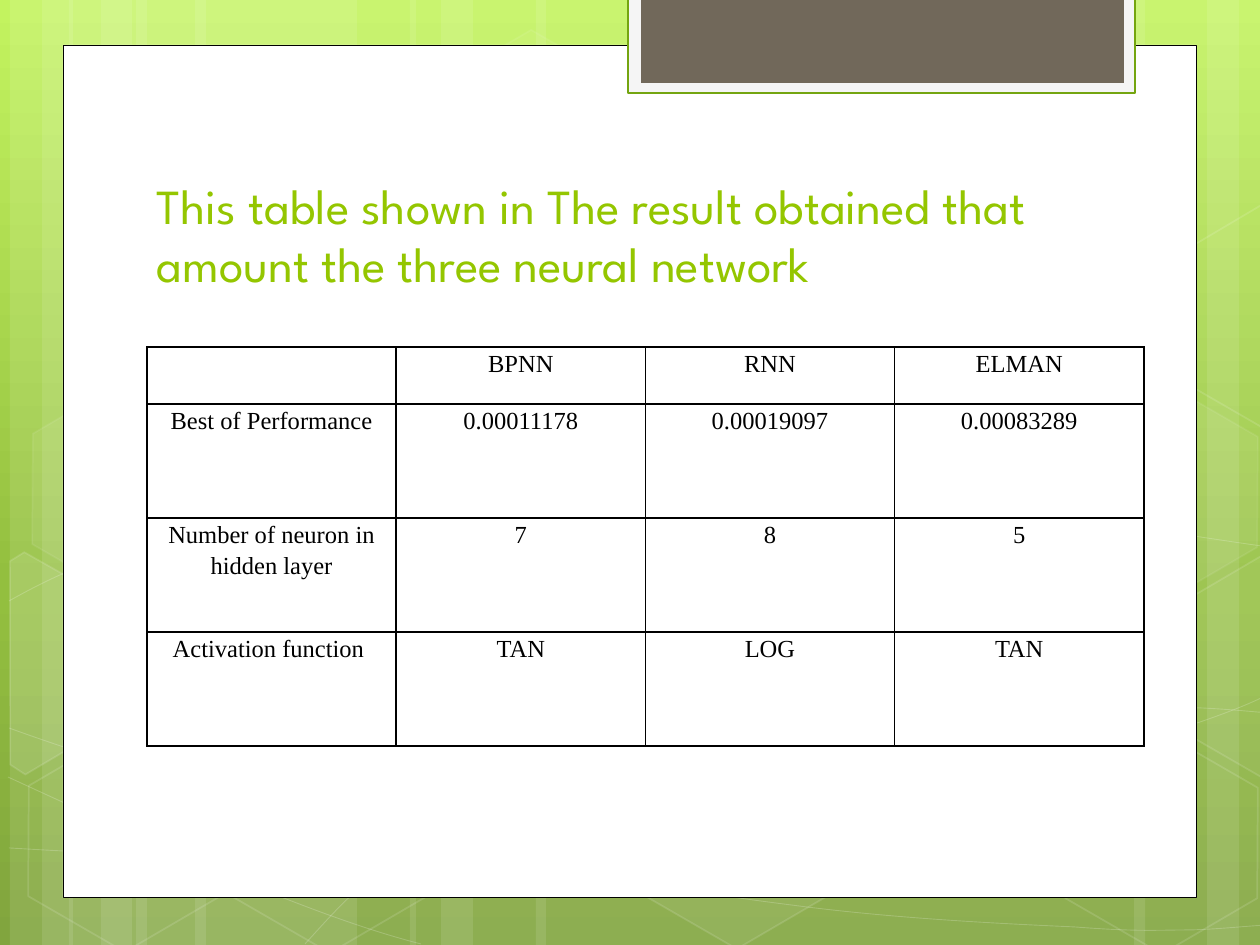
"""Build a slide comparing the results of three neural networks in a table."""
import copy
import math

import pptx
import pptx.dml.color
import pptx.enum.shapes
import pptx.enum.text
import pptx.oxml
import pptx.oxml.ns
import pptx.util

SCALE = 914400 / 126
COLORS = {
    "sky": "C3F35F", "leaf": "93BF3F", "moss": "81A53E", "white": "FFFFFF", "black": "000000",
    "frame": "F5F5F5", "frame_edge": "74A510", "tab": "71685A", "title": "94C600",
}
RECTANGLE = pptx.enum.shapes.MSO_SHAPE.RECTANGLE
HEXAGON = pptx.enum.shapes.MSO_SHAPE.HEXAGON
qn = pptx.oxml.ns.qn


def px(*lengths):
    return [pptx.util.Emu(round(length * SCALE)) for length in lengths]


def paint(shape, fill=None, line=None, width=1, fill_alpha=100, line_alpha=100):
    shape.shadow.inherit = False
    for target, color, alpha in ((shape.fill, fill, fill_alpha), (shape.line.fill, line, line_alpha)):
        if color is None or alpha == 0:
            target.background()
            continue
        target.solid()
        target.fore_color.rgb = pptx.dml.color.RGBColor.from_string(COLORS[color])
        if alpha < 100:
            holder = shape._element.spPr if target is shape.fill else shape._element.spPr.find(qn("a:ln"))
            shade = holder.find(qn("a:solidFill")).find(qn("a:srgbClr"))
            shade.append(shade.makeelement(qn("a:alpha"), {"val": str(alpha * 1000)}))
    if line:
        shape.line.width = pptx.util.Pt(width)


deck = pptx.Presentation()
deck.slide_width, deck.slide_height = px(1260, 945)
page = deck.slides.add_slide(deck.slide_layouts[5])

backdrop = page.background.fill
backdrop.gradient()
backdrop.gradient_angle = 270
stop_list = page._element.find(".//" + qn("a:gsLst"))
stop_list.append(copy.deepcopy(stop_list[-1]))
for stop, (color, position) in zip(backdrop.gradient_stops, (("sky", 0), ("leaf", 0.62), ("moss", 1))):
    stop.color.rgb = pptx.dml.color.RGBColor.from_string(COLORS[color])
    stop.position = position

bands = [(136, 221, 0), (10, 63, 0), (42, 105, 0), (195, 221, 0), (69, 63, 0), (101, 105, 0),
         (924, 221, 180), (1207, 63, 180), (1134, 105, 180), (536, 388, 0), (410, 63, 0), (441, 105, 0)]
for left, width, turn in bands:
    band = page.shapes.add_shape(RECTANGLE, *px(left, 0, width, 945))
    band.rotation = turn
    paint(band, fill="white", fill_alpha=10)

curves = [
    [(9, 848), (77, 852), (145, 856), (239, 854), (334, 853), (451, 851), (577, 838),
     (703, 825), (882, 801), (998, 777), (1113, 753), (1231, 715), (1269, 694)],
    [(9, 601), (45, 581), (82, 562), (152, 543), (224, 524), (326, 496), (437, 488),
     (549, 479), (685, 478), (824, 488), (963, 498), (1193, 537), (1269, 547)],
    [(8, 777), (160, 847), (311, 916), (421, 944)],
    [(9, 728), (48, 742), (88, 756), (161, 776), (234, 795), (344, 827), (450, 848),
     (554, 869), (687, 892), (791, 905), (896, 919), (1008, 924), (1075, 927),
     (1140, 932), (1158, 930), (1191, 930), (1223, 929), (1246, 926), (1269, 925)],
    [(305, 944), (328, 919), (350, 893), (381, 871), (411, 848), (454, 823), (489, 805),
     (524, 787), (546, 779), (592, 767), (638, 755), (722, 737), (766, 728),
     (811, 719), (818, 719), (857, 717), (896, 713), (958, 709), (1000, 708),
     (1044, 707), (1116, 708), (1116, 708), (1144, 708), (1173, 708), (1201, 708),
     (1223, 709), (1245, 711), (1256, 712), (1268, 713), (1264, 712), (1268, 713)],
]
for knots in curves:
    builder = page.shapes.build_freeform(*knots[0], scale=SCALE)
    builder.add_line_segments(knots[1:], close=False)
    curve = builder.convert_to_shape()
    outline = curve._element.find(".//" + qn("a:path"))
    segments = outline.findall(qn("a:lnTo"))
    for start in range(0, len(segments), 3):
        bend = outline.makeelement(qn("a:cubicBezTo"), {})
        outline.append(bend)
        for segment in segments[start:start + 3]:
            bend.append(segment[0])
            outline.remove(segment)
    paint(curve, line="white", width=0.5, line_alpha=20)

hexagons = [(421, 45, 4, 8), (626, 742, 6, 12), (14, 745, 0, 12), (18, 393, 7, 8),
            (219, 746, 0, 12), (949, 571, 10, 12), (1051, 747, 0, 12), (1051, 396, 7, 8)]
for left, top, fill_alpha, line_alpha in hexagons:
    hexagon = page.shapes.add_shape(HEXAGON, *px(left, top, 221, 192))
    hexagon.rotation = 30
    hexagon.adjustments[0] = 0.285
    paint(hexagon, "white", "white", 1, fill_alpha, line_alpha)

cut_hexagons = [
    ((45, 674), [(10, 561), (24, 552), (121, 607), (120, 718), (25, 774), (10, 765)], 10),
    ((1241, 655), [(1167, 611), (1261, 556), (1271, 562), (1271, 772), (1263, 777), (1167, 722)], 4),
    ((1241, 304), [(1167, 261), (1261, 205), (1273, 212), (1271, 422), (1263, 427), (1167, 372)], 0),
]
cosine, sine = math.cos(math.radians(30)), math.sin(math.radians(30))
for (middle_x, middle_y), corners, fill_alpha in cut_hexagons:
    upright = [(middle_x + (x - middle_x) * cosine + (y - middle_y) * sine,
                middle_y - (x - middle_x) * sine + (y - middle_y) * cosine) for x, y in corners]
    builder = page.shapes.build_freeform(*upright[0], scale=SCALE)
    builder.add_line_segments(upright[1:], close=True)
    cut_hexagon = builder.convert_to_shape()
    cut_hexagon.rotation = 30
    paint(cut_hexagon, "white", "white", 1, fill_alpha, 12)

panels = [
    ((63, 45, 1134, 853), {"fill": "white", "line": "black", "width": 0.5}),
    ((628, -3, 507, 96), {"fill": "frame", "line": "frame_edge", "width": 1.25}),
    ((641, -3, 483, 86), {"fill": "tab"}),
]
for place, look in panels:
    paint(page.shapes.add_shape(RECTANGLE, *px(*place)), **look)

title = page.shapes.title
page.shapes._spTree.append(title._element)
title.left, title.top, title.width, title.height = px(144, 142, 968, 157)
title_frame = title.text_frame
frame_format = {
    "text": "This table shown in The result obtained that amount the three neural network",
    "word_wrap": True,
    "auto_size": pptx.enum.text.MSO_AUTO_SIZE.NONE,
    "vertical_anchor": pptx.enum.text.MSO_ANCHOR.BOTTOM,
}
for name, value in frame_format.items():
    setattr(title_frame, name, value)
title_para = title_frame.paragraphs[0]
title_para.alignment = pptx.enum.text.PP_ALIGN.LEFT
title_font = title_para.runs[0].font
for name, value in {"name": "League Spartan", "size": pptx.util.Pt(28)}.items():
    setattr(title_font, name, value)
title_font.color.rgb = pptx.dml.color.RGBColor.from_string(COLORS["title"])

results = [
    ["", "BPNN", "RNN", "ELMAN"],
    [" Best of Performance ", "0.00011178", "0.00019097", "0.00083289"],
    ["Number of neuron in hidden layer", "7", "8", "5"],
    ["Activation function ", "TAN", "LOG", "TAN"],
]
table = page.shapes.add_table(4, 4, *px(147, 347, 997, 399)).table
table.first_row = table.horz_banding = False
side, flat = px(9, 0)
cell_format = {"margin_left": side, "margin_right": side, "margin_top": flat, "margin_bottom": flat}
para_format = {"alignment": pptx.enum.text.PP_ALIGN.CENTER, "line_spacing": 1.15}
font_format = {"name": "Times New Roman", "size": pptx.util.Pt(14)}
for row, height, texts in zip(table.rows, px(57, 114, 114, 114), results):
    row.height = height
    for cell, text in zip(row.cells, texts):
        cell.text = text
        cell.fill.background()
        para = cell.text_frame.paragraphs[0]
        formats = [(cell, cell_format), (para, para_format)]
        for span in para.runs:
            formats.append((span.font, font_format))
            span.font.color.rgb = pptx.dml.color.RGBColor.from_string(COLORS["black"])
        for target, values in formats:
            for name, value in values.items():
                setattr(target, name, value)
        for index, edge in enumerate(("lnL", "lnR", "lnT", "lnB")):
            border = pptx.oxml.parse_xml(
                f'<a:{edge} {pptx.oxml.ns.nsdecls("a")} w="12700"><a:solidFill>'
                f'<a:srgbClr val="{COLORS["black"]}"/></a:solidFill></a:{edge}>')
            cell._tc.tcPr.insert(index, border)

deck.save("out.pptx")
